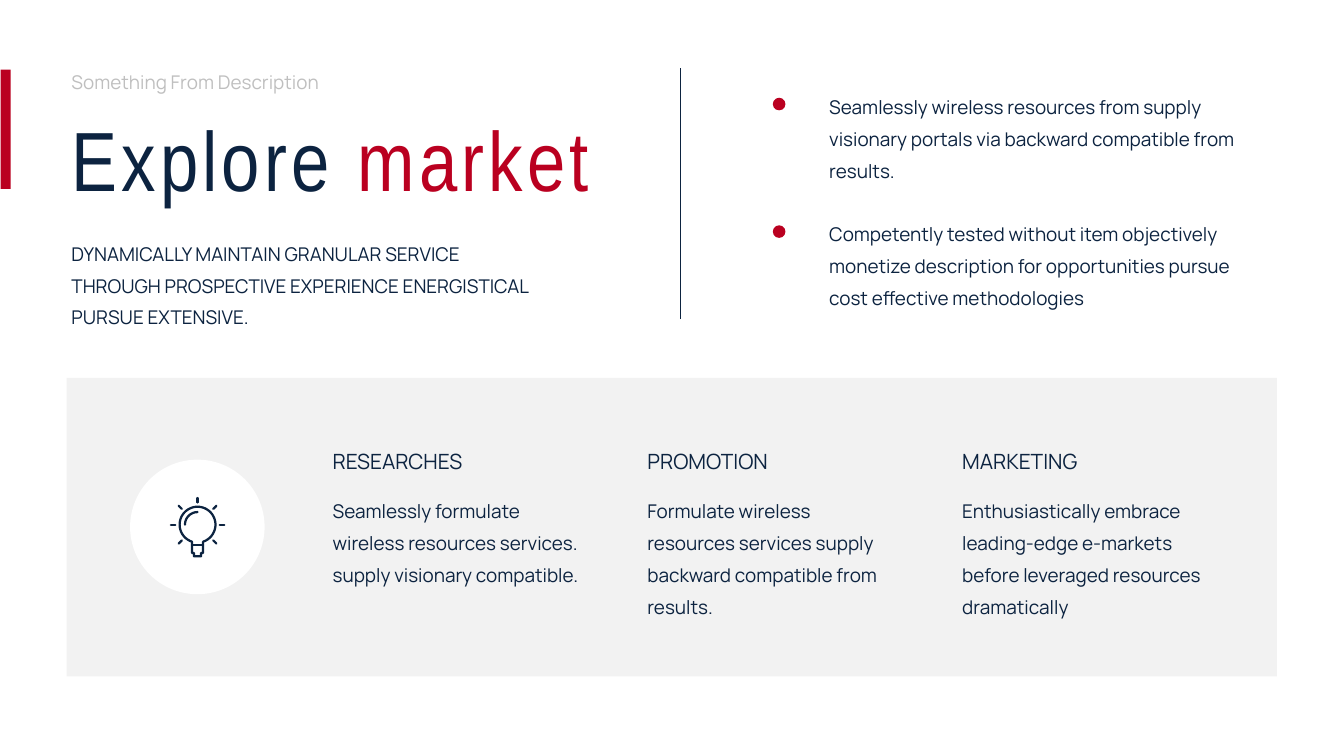
from math import cos, radians, sin
from typing import NamedTuple

from pptx import Presentation
from pptx.dml.color import RGBColor
from pptx.enum.shapes import MSO_CONNECTOR as Connector
from pptx.enum.shapes import MSO_SHAPE as Shape
from pptx.enum.text import MSO_AUTO_SIZE as AutoSize
from pptx.oxml.ns import qn
from pptx.util import Inches, Pt
from lxml.etree import SubElement

COLORS = {
    "navy": "0C2340",
    "red": "BA0020",
    "silver": "BFBFBF",
    "mist": "F2F2F2",
    "white": "FFFFFF",
}
WIDTH, HEIGHT = Inches(26.66), Inches(15)
BODY_SIZE, HEADING_SIZE, TITLE_SIZE = 27, 30, 120
MARGIN = 4.95


class Box(NamedTuple):
    """Place and size, in percent of the slide's width and height."""
    left: float
    top: float
    width: float
    height: float

    def emu(self) -> tuple[int, ...]:
        return (*at(self.left, self.top), *at(self.width, self.height))


class Run(NamedTuple):
    text: str
    color: str = "navy"
    size: float = BODY_SIZE
    font: str = "Manrope"
    tracking: float = 0


class Service(NamedTuple):
    heading: str
    detail: str


SERVICES = [
    Service("RESEARCHES", "Seamlessly formulate wireless resources services. "
            "supply visionary compatible."),
    Service("PROMOTION", "Formulate wireless resources services supply "
            "backward compatible from results."),
    Service("MARKETING", "Enthusiastically embrace leading-edge e-markets "
            "before leveraged resources dramatically"),
]
BENEFITS = [
    "Seamlessly wireless resources from supply visionary portals via "
    "backward compatible from results.",
    "Competently tested without item objectively monetize description for "
    "opportunities pursue cost effective methodologies",
]


def at(x: float, y: float) -> tuple[int, int]:
    """Turn shares in percent into slide units."""
    return round(WIDTH * x / 100), round(HEIGHT * y / 100)


def rgb(color: str) -> RGBColor:
    return RGBColor.from_string(COLORS[color])


def add_text(slide, box: Box, *paragraphs: list[Run],
             line_spacing: float = 1.4, gap: float = 0) -> None:
    frame = slide.shapes.add_textbox(*box.emu()).text_frame
    frame.word_wrap = True
    frame.auto_size = AutoSize.SHAPE_TO_FIT_TEXT
    for index, runs in enumerate(paragraphs):
        paragraph = frame.add_paragraph() if index else frame.paragraphs[0]
        paragraph.line_spacing = line_spacing
        paragraph.space_before = Pt(gap if index else 0)
        for item in runs:
            run = paragraph.add_run()
            run.text = item.text
            run.font.name = item.font
            run.font.size = Pt(item.size)
            run.font.color.rgb = rgb(item.color)
            if item.tracking:
                run.font._element.set("spc", str(round(item.tracking * 100)))


def add_block(slide, kind: Shape, box: Box, color: str) -> None:
    block = slide.shapes.add_shape(kind, *box.emu())
    block.shadow.inherit = False
    block.fill.solid()
    block.fill.fore_color.rgb = rgb(color)
    block.line.fill.background()


def style_line(shape, width: float, rounded: bool = False) -> None:
    shape.line.color.rgb = rgb("navy")
    shape.line.width = Pt(width)
    if rounded:
        line = shape.line._get_or_add_ln()
        line.set("cap", "rnd")
        SubElement(line, qn("a:round"))


def add_line(slide, start: tuple[int, int], end: tuple[int, int],
             width: float, rounded: bool = False) -> None:
    line = slide.shapes.add_connector(Connector.STRAIGHT, *start, *end)
    style_line(line, width, rounded)
    SubElement(line._element.spPr, qn("a:effectLst"))


def polar(radius: float, angle: float) -> tuple[float, float]:
    return radius * cos(radians(angle)), radius * sin(radians(angle))


def add_bulb(slide, x: float, y: float, radius: float, stroke: float) -> None:
    """Draw a light bulb; its parts are measured in radii of the glass."""
    center_x, center_y = at(x, y)
    unit = HEIGHT * radius / 100

    def spot(point: tuple[float, float]) -> tuple[int, int]:
        return round(center_x + point[0] * unit), round(center_y + point[1] * unit)

    def outline(points: list[tuple[float, float]], close: bool) -> None:
        first, *rest = map(spot, points)
        builder = slide.shapes.build_freeform(*first)
        builder.add_line_segments(rest, close=close)
        curve = builder.convert_to_shape()
        curve.shadow.inherit = False
        curve.fill.background()
        style_line(curve, stroke, rounded=True)

    glass = [polar(1, angle) for angle in range(108, 433, 6)]
    socket = [(0.31, 1.58), (0.2, 1.58), (0.2, 1.77)]
    outline(glass + socket + [(-dx, dy) for dx, dy in reversed(socket)], True)
    outline([polar(0.7, angle) for angle in range(180, 271, 6)], False)
    add_line(slide, spot((-0.31, 1.15)), spot((0.31, 1.15)), stroke, True)
    for angle in range(135, 406, 45):
        add_line(slide, spot(polar(1.24, angle)), spot(polar(1.49, angle)),
                 stroke, True)


def add_intro(slide) -> None:
    add_text(slide, Box(MARGIN, 16.53, 47.26, 12.13),
             [Run("Explore ", "navy", TITLE_SIZE, "Arial Narrow", 6),
              Run("market", "red", TITLE_SIZE, "Arial Narrow", 6)],
             line_spacing=0.8)
    add_text(slide, Box(MARGIN, 7.8, 33.46, 4.73),
             [Run("Something From Description", "silver")])
    add_block(slide, Shape.RECTANGLE, Box(0.04, 9.2, 0.75, 15.8), "red")
    add_text(slide, Box(MARGIN, 30.53, 36.01, 13.07),
             [Run("DYNAMICALLY MAINTAIN GRANULAR SERVICE THROUGH PROSPECTIVE "
                  "EXPERIENCE ENERGISTICAL PURSUE EXTENSIVE.")])


def add_benefits(slide) -> None:
    add_line(slide, at(50.64, 42.2), at(50.64, 9), 0.5)
    add_text(slide, Box(61.33, 11.13, 33.08, 30),
             *[[Run(benefit)] for benefit in BENEFITS], gap=45.4)
    for row in range(len(BENEFITS)):
        add_block(slide, Shape.OVAL,
                  Box(57.5, 12.93 + row * 16.87, 0.94, 1.67), "red")


def add_services(slide) -> None:
    add_block(slide, Shape.RECTANGLE, Box(MARGIN, 50, 90.06, 39.47), "mist")
    for column, service in enumerate(SERVICES):
        add_text(slide, Box(24.38 + column * 23.42, 57.73, 19.39, 25),
                 [Run(service.heading, size=HEADING_SIZE)],
                 [Run(service.detail)], gap=24)
    add_block(slide, Shape.OVAL, Box(9.68, 60.8, 10.01, 17.8), "white")
    add_bulb(slide, 14.7, 69.4, radius=2.37, stroke=3.2)


def main() -> None:
    deck = Presentation()
    deck.slide_width, deck.slide_height = WIDTH, HEIGHT
    slide = deck.slides.add_slide(deck.slide_layouts[6])
    add_intro(slide)
    add_benefits(slide)
    add_services(slide)
    deck.save("out.pptx")


if __name__ == "__main__":
    main()
